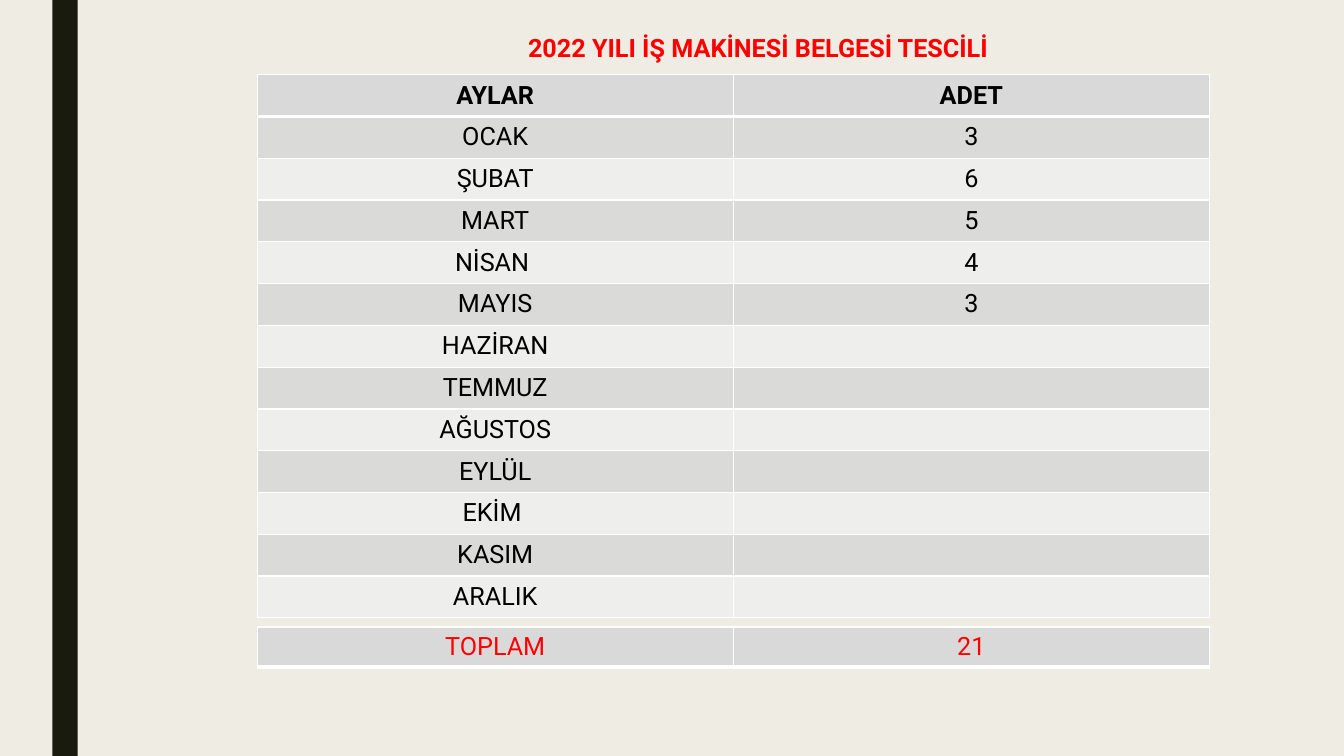
from dataclasses import dataclass

from lxml.etree import SubElement
from pptx import Presentation
from pptx.dml.color import RGBColor
from pptx.enum.shapes import MSO_SHAPE
from pptx.enum.text import MSO_ANCHOR, PP_ALIGN
from pptx.oxml.ns import qn
from pptx.slide import Slide
from pptx.table import _Cell
from pptx.text.text import _Paragraph
from pptx.util import Cm, Pt

COLORS = {
    "background": "EFEDE3",
    "bar": "191B0E",
    "accent": "FF0000",
    "text": "000000",
    "heading": "D9D9D9",
    "odd": "DADBD9",
    "even": "EEEEED",
    "border": "FFFFFF",
}
FONT = {"name": "Roboto", "size": Pt(18)}
TABLE_LEFT, TABLE_WIDTH = Cm(6.48), Cm(24)
MONTHS = ["OCAK", "ŞUBAT", "MART", "NİSAN ", "MAYIS", "HAZİRAN", "TEMMUZ",
          "AĞUSTOS", "EYLÜL", "EKİM ", "KASIM", "ARALIK"]
COUNTS = [3, 6, 5, 4, 3]


@dataclass
class Row:
    label: str
    value: str
    fill: str
    color: str = "text"
    bold: bool = False
    borders: str = "LRB"
    bottom_width: float = 1


def rgb(name: str) -> RGBColor:
    return RGBColor.from_string(COLORS[name])


def write(paragraph: _Paragraph, text: str, color: str, bold: bool) -> None:
    paragraph.alignment = PP_ALIGN.CENTER
    run = paragraph.add_run()
    run.text = text
    for attribute, value in {**FONT, "bold": bold}.items():
        setattr(run.font, attribute, value)
    run.font.color.rgb = rgb(color)


def add_borders(cell: _Cell, row: Row) -> None:
    properties = cell._tc.get_or_add_tcPr()
    for side in row.borders:
        width = row.bottom_width if side == "B" else 1
        line = SubElement(properties, qn(f"a:ln{side}"), w=str(Pt(width)))
        fill = SubElement(line, qn("a:solidFill"))
        SubElement(fill, qn("a:srgbClr"), val=COLORS["border"])


def add_count_table(slide: Slide, rows: list[Row], top: int, height: int) -> None:
    table = slide.shapes.add_table(
        len(rows), 2, TABLE_LEFT, top, TABLE_WIDTH, height).table
    for attribute in ("first_row", "horz_banding"):
        setattr(table, attribute, False)
    for index, row in enumerate(rows):
        for column, text in enumerate((row.label, row.value)):
            cell = table.cell(index, column)
            add_borders(cell, row)
            cell.fill.solid()
            cell.fill.fore_color.rgb = rgb(row.fill)
            cell.vertical_anchor = MSO_ANCHOR.MIDDLE
            if text:
                write(cell.text_frame.paragraphs[0], text, row.color, row.bold)


def main() -> None:
    presentation = Presentation()
    presentation.slide_width, presentation.slide_height = Cm(33.87), Cm(19.05)
    slide = presentation.slides.add_slide(presentation.slide_layouts[5])
    slide.background.fill.solid()
    slide.background.fill.fore_color.rgb = rgb("background")

    # Side bar
    bar = slide.shapes.add_shape(
        MSO_SHAPE.RECTANGLE, Cm(1.32), 0, Cm(0.64), presentation.slide_height)
    bar.shadow.inherit = False
    bar.fill.solid()
    bar.fill.fore_color.rgb = rgb("bar")
    bar.line.fill.background()

    # Title
    title = slide.shapes.title
    title.left, title.top = Cm(11.28), Cm(0.79)
    title.width, title.height = Cm(15.65), Cm(0.89)
    frame_format = {"margin_top": 0, "margin_bottom": 0, "word_wrap": True,
                    "vertical_anchor": MSO_ANCHOR.MIDDLE}
    for attribute, value in frame_format.items():
        setattr(title.text_frame, attribute, value)
    heading = title.text_frame.paragraphs[0]
    heading.line_spacing = 0.89
    write(heading, "2022 YILI İŞ MAKİNESİ BELGESİ TESCİLİ", "accent", True)

    # Monthly counts
    rows = [Row("AYLAR", "ADET", "heading", bold=True,
                borders="LRTB", bottom_width=3)]
    for index, month in enumerate(MONTHS):
        value = str(COUNTS[index]) if index < len(COUNTS) else ""
        rows.append(Row(month, value, "even" if index % 2 else "odd"))
    add_count_table(slide, rows, Cm(1.88), Cm(13.69))

    # Total
    total = Row("TOPLAM", str(sum(COUNTS)), "heading", "accent",
                borders="LRTB", bottom_width=3)
    add_count_table(slide, [total], Cm(15.8), Cm(1))

    presentation.save("out.pptx")


if __name__ == "__main__":
    main()
